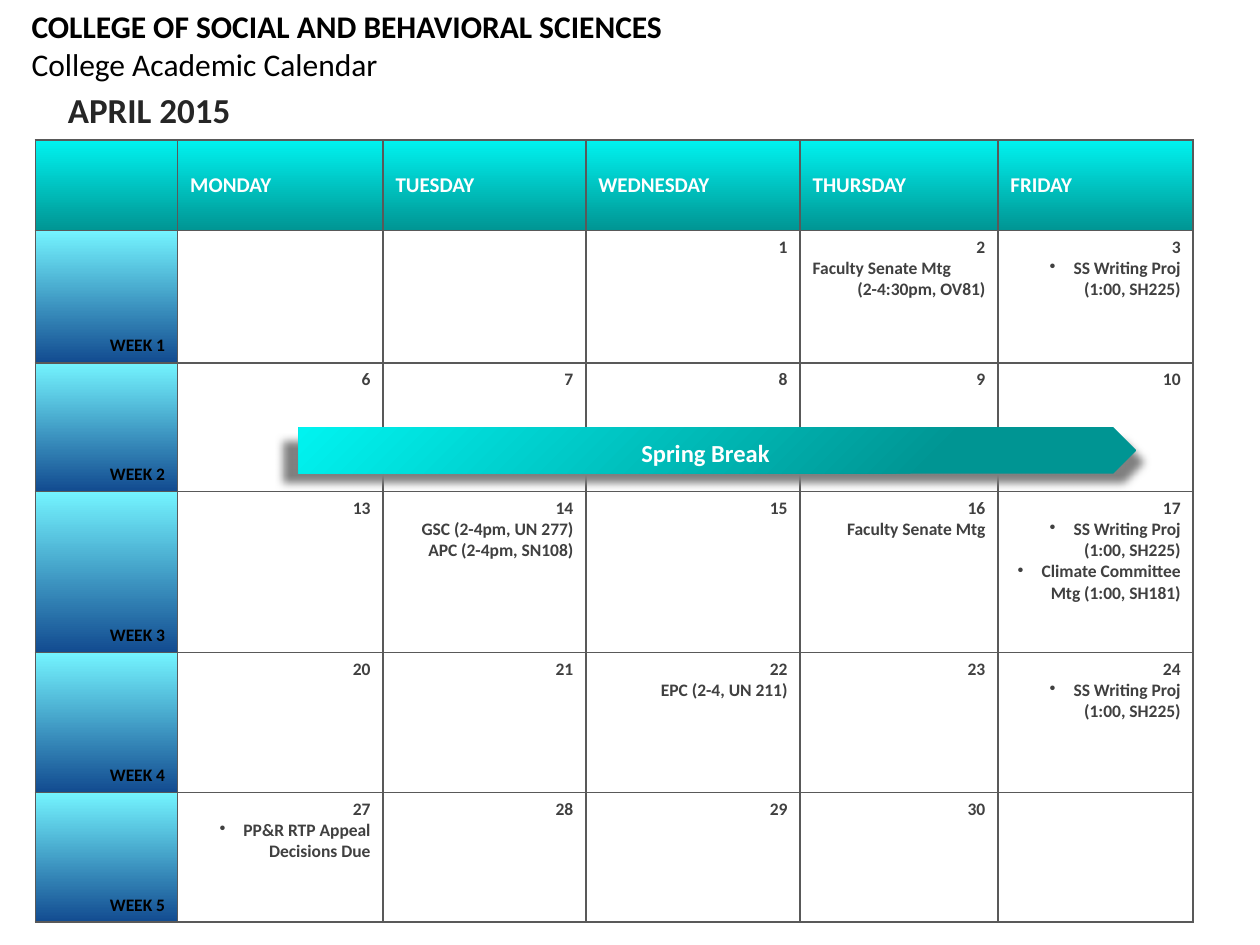
from lxml.etree import SubElement
from pptx import Presentation
from pptx.dml.color import RGBColor
from pptx.enum.shapes import MSO_SHAPE as Shape
from pptx.enum.text import MSO_ANCHOR as Anchor, PP_ALIGN as Align
from pptx.oxml.ns import qn
from pptx.util import Inches, Pt

FONT = "Calibri"
TEAL = [(0, "00F3F0"), (1, "009593")]
BLUE = [(0, "74F4FF"), (1, "124B90")]
DAY_TEXT, WHITE, BLACK, GRID_LINE = "404040", "FFFFFF", "000000", "595959"

COLUMNS = [1.13, 1.63, 1.61, 1.7, 1.57, 1.55]
ROWS = [0.72, 1.05, 1.02, 1.28, 1.11, 1.03]
WEEKDAYS = ["MONDAY", "TUESDAY", "WEDNESDAY", "THURSDAY", "FRIDAY"]
LAST_DAY = 30
FIRST_COLUMN = 3  # April 1 is a Wednesday
BULLET = "• "
WRITING = BULLET + "SS Writing Proj (1:00, SH225)"
EVENTS = {
    2: ["Faculty Senate Mtg", "(2-4:30pm, OV81)"],
    3: [WRITING],
    14: ["GSC (2-4pm, UN 277)", "APC (2-4pm, SN108)"],
    16: ["Faculty Senate Mtg"],
    17: [WRITING, BULLET + "Climate Committee Mtg (1:00, SH181)"],
    22: ["EPC (2-4, UN 211)"],
    24: [WRITING],
    27: [BULLET + "PP&R RTP Appeal Decisions Due"],
}
LEFT_ALIGNED = {(2, 1)}  # day and line number


def color(value):
    return RGBColor.from_string(value)


def paint(fill, value):
    """Fill with a hex string."""
    fill.solid()
    fill.fore_color.rgb = color(value)


def shade(fill, stops, angle=270):
    """Fill with a two-stop gradient."""
    fill.gradient()
    fill.gradient_angle = angle
    for stop, (position, value) in zip(fill.gradient_stops, stops):
        stop.position = position
        stop.color.rgb = color(value)


def add_bullet(paragraph):
    props = paragraph._p.get_or_add_pPr()
    props.set("marL", str(Inches(0.19)))
    props.set("indent", str(-Inches(0.19)))
    SubElement(props, qn("a:buChar"), char=BULLET.strip())


def write(frame, lines, size, value, align=Align.LEFT, bold=True):
    """Write one paragraph per line; a leading bullet becomes a real one."""
    for index, line in enumerate(lines):
        paragraph = frame.paragraphs[0] if index == 0 else frame.add_paragraph()
        if line.startswith(BULLET):
            add_bullet(paragraph)
        paragraph.alignment = align
        run = paragraph.add_run()
        run.text = line.removeprefix(BULLET)
        for name, setting in {"name": FONT, "size": Pt(size), "bold": bold}.items():
            setattr(run.font, name, setting)
        run.font.color.rgb = color(value)


def add_borders(cell):
    props = cell._tc.get_or_add_tcPr()
    for side in ("lnL", "lnR", "lnT", "lnB"):
        line = SubElement(props, qn("a:" + side), w=str(Pt(1)))
        SubElement(SubElement(line, qn("a:solidFill")), qn("a:srgbClr"), val=GRID_LINE)


def add_text(shapes, box, lines, size, value, align=Align.LEFT, wrap=True):
    frame = shapes.add_textbox(*map(Inches, box)).text_frame
    frame.word_wrap = wrap
    write(frame, lines, size, value, align)


def add_title(slide):
    title = slide.shapes.title
    title.left, title.top, title.width, title.height = map(Inches, (0.25, 0.04, 5.3, 0.63))
    frame = title.text_frame
    settings = {"margin_left": 0, "margin_right": 0, "word_wrap": True,
                "vertical_anchor": Anchor.MIDDLE}
    for name, setting in settings.items():
        setattr(frame, name, setting)
    write(frame, ["COLLEGE OF SOCIAL AND BEHAVIORAL SCIENCES",
                  "College Academic Calendar"], 18, BLACK)
    frame.paragraphs[1].runs[0].font.bold = False
    for paragraph in frame.paragraphs:
        paragraph.space_before = Pt(0)
        paragraph.line_spacing = 1.0


def add_calendar(slide):
    table = slide.shapes.add_table(len(ROWS), len(COLUMNS), Inches(0.28), Inches(1.11),
                                   Inches(sum(COLUMNS)), Inches(sum(ROWS))).table
    for column, width in zip(table.columns, COLUMNS):
        column.width = Inches(width)
    for row, height in zip(table.rows, ROWS):
        row.height = Inches(height)
    for cell in table.iter_cells():
        add_borders(cell)
        paint(cell.fill, WHITE)

    # Weekday header
    for column, name in enumerate([""] + WEEKDAYS):
        cell = table.cell(0, column)
        shade(cell.fill, TEAL)
        cell.vertical_anchor = Anchor.MIDDLE
        if name:
            write(cell.text_frame, [name], 12, WHITE)

    # Week labels
    for week in range(1, len(ROWS)):
        cell = table.cell(week, 0)
        shade(cell.fill, BLUE)
        cell.vertical_anchor = Anchor.BOTTOM
        write(cell.text_frame, [f"WEEK {week}"], 10, BLACK, Align.RIGHT)

    # Working days with their events
    for day in range(1, LAST_DAY + 1):
        week, column = divmod(day + FIRST_COLUMN - 2, 7)
        if column < len(WEEKDAYS):
            frame = table.cell(week + 1, column + 1).text_frame
            write(frame, [str(day)] + EVENTS.get(day, []), 10, DAY_TEXT, Align.RIGHT)
            for number, paragraph in enumerate(frame.paragraphs):
                if (day, number) in LEFT_ALIGNED:
                    paragraph.alignment = Align.LEFT


def add_arrow(shapes, box):
    arrow = shapes.add_shape(Shape.PENTAGON, *map(Inches, box))
    arrow.shadow.inherit = False
    arrow.line.fill.background()
    return arrow


def add_spring_break(slide):
    shapes = slide.shapes.add_group_shape().shapes
    # Soft grey arrow beneath the teal one
    under = add_arrow(shapes, (2.19, 3.44, 7.01, 0.45))
    paint(under.fill, "808080")
    effects = under._element.spPr.find(qn("a:effectLst"))
    SubElement(effects, qn("a:softEdge"), rad=str(Pt(5)))

    banner = add_arrow(shapes, (2.37, 3.39, 6.65, 0.37))
    shade(banner.fill, [(0.24, "009593"), (1, "00F3F0")], angle=135)
    add_text(shapes, (2.92, 3.43, 5.36, 0.34), ["Spring Break"], 14, WHITE, Align.CENTER)


def main():
    deck = Presentation()
    deck.slide_width, deck.slide_height = Inches(10), Inches(7.5)
    slide = deck.slides.add_slide(deck.slide_layouts[5])
    add_title(slide)
    add_calendar(slide)
    add_text(slide.shapes, (0.44, 0.65, 1.5, 0.44), ["APRIL 2015"], 20, "262626", wrap=False)
    add_spring_break(slide)
    deck.save("out.pptx")


if __name__ == "__main__":
    main()
